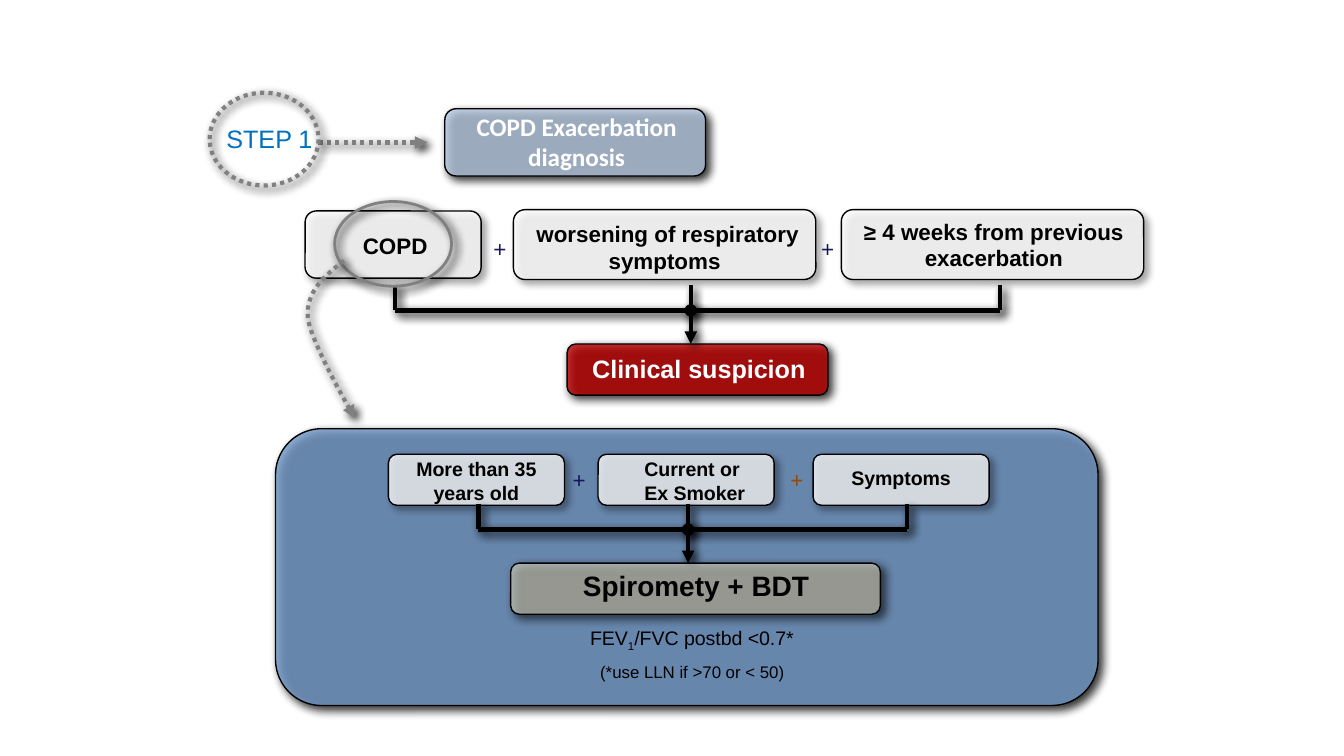
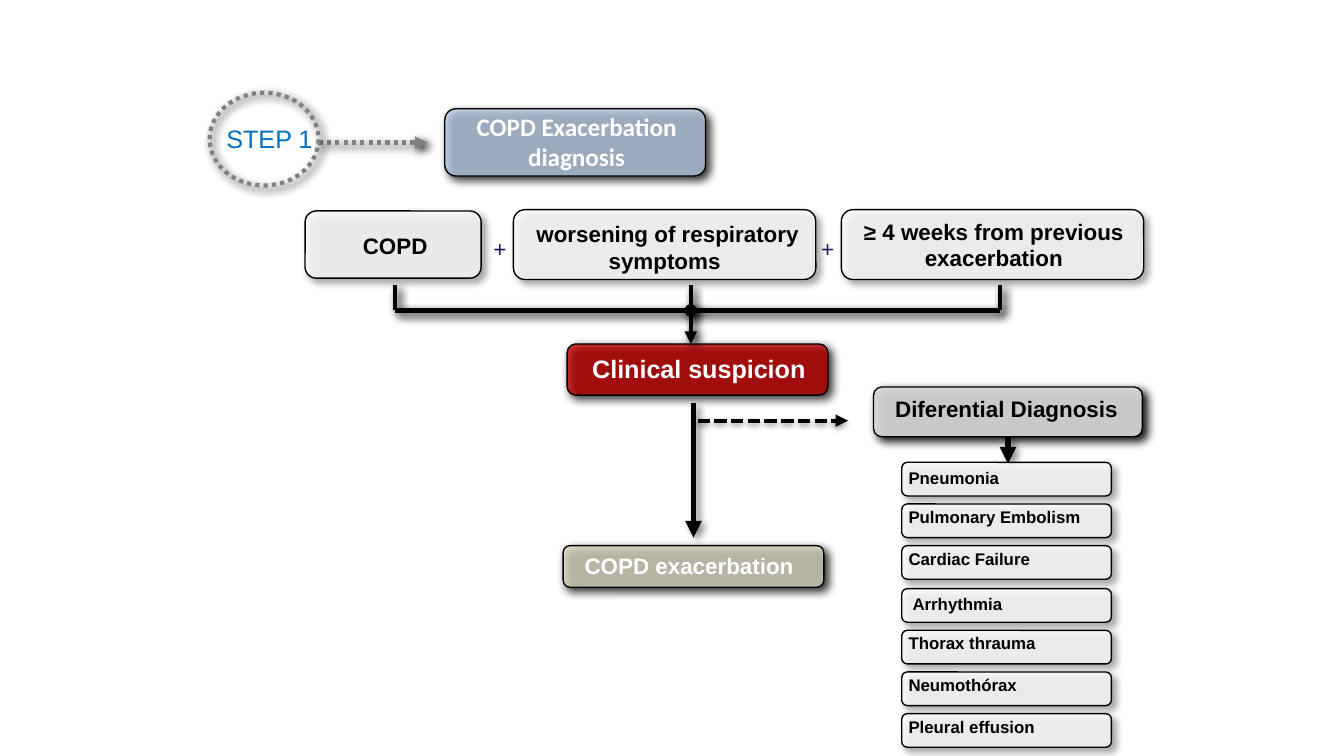
import dataclasses
import pptx
import pptx.dml.color
import pptx.enum.dml
import pptx.enum.shapes
import pptx.enum.text
import pptx.oxml
import pptx.oxml.ns
import pptx.util

PX = 9144  # one px is a hundredth of an inch
SHAPE = pptx.enum.shapes.MSO_SHAPE
ALIGN = pptx.enum.text.PP_ALIGN
ANCHOR = pptx.enum.text.MSO_ANCHOR
DASH = pptx.enum.dml.MSO_LINE


@dataclasses.dataclass(frozen=True)
class Theme:
    font: str = "Arial"
    title_font: str = "Calibri"
    black: str = "000000"
    white: str = "FFFFFF"
    grey: str = "808080"
    step: str = "0070C0"
    plus: str = "16165D"
    plus_warm: str = "984807"
    # fills: colour and opacity in percent
    header: tuple = ("B9CDE5", 77)
    alert: tuple = ("C00000", 77)
    plain: tuple = ("FFFFFF", 77)
    panel: tuple = ("759CCC", 79)
    test: tuple = ("DDD9C3", 60)
    outcome: tuple = ("DDD9C3", 77)
    differential: tuple = ("D9D9D9", 92)
    # shadows: opacity in percent, blur and distance in points, angle
    strong: tuple = (100, 5, 2.8, 45)
    soft: tuple = (43, 4, 3, 45)
    faint: tuple = (38, 3.1, 1.6, 90)
    # type sizes
    result: float = 15
    lead: float = 13.5
    body: float = 12
    small: float = 10.5
    tiny: float = 9


T = Theme()


# Shared helpers

def px(*values):
    return [pptx.util.Emu(round(v * PX)) for v in values]


def at(box, dx, dy, w, h):
    return box[0] + dx, box[1] + dy, w, h


def rgb(color):
    return pptx.dml.color.RGBColor.from_string(color)


def apply(obj, values):
    for name, value in values.items():
        setattr(obj, name, value)


def sub(parent, tag, **attrs):
    el = pptx.oxml.parse_xml(f"<a:{tag} {pptx.oxml.ns.nsdecls('a')}/>")
    for name, value in attrs.items():
        el.set(name, str(value))
    parent.append(el)
    return el


def outline(sp, color, width, dash=None, head=None, tail=None):
    sp.line.color.rgb = rgb(color)
    sp.line.width = pptx.util.Pt(width)
    if dash:
        sp.line.dash_style = dash
    ln = sp.line._get_or_add_ln()
    for tag, kind in (("headEnd", head), ("tailEnd", tail)):
        if kind:
            sub(ln, tag, type=kind)


def cast(sp, shadow):
    opacity, blur, dist, angle = shadow
    effects = sub(sp._element.spPr, "effectLst")
    outer = sub(effects, "outerShdw", blurRad=round(blur * 12700), dist=round(dist * 12700),
                dir=angle * 60000, algn="tl", rotWithShape=0)
    sub(sub(outer, "srgbClr", val=T.black), "alpha", val=opacity * 1000)


def shape(s, kind, box, fill=None, color=T.black, width=0.75, dash=None, shadow=T.strong):
    sp = s.shapes.add_shape(kind, *px(*box))
    if fill:
        sp.fill.solid()
        sp.fill.fore_color.rgb = rgb(fill[0])
        clr = sp._element.spPr.find(".//" + pptx.oxml.ns.qn("a:srgbClr"))
        sub(clr, "alpha", val=fill[1] * 1000)
    else:
        sp.fill.background()
    outline(sp, color, width, dash)
    cast(sp, shadow)
    return sp


def line(s, start, end, color=T.black, width=2.25, shadow=T.strong, **ends):
    straight = pptx.enum.shapes.MSO_CONNECTOR.STRAIGHT
    sp = s.shapes.add_connector(straight, *px(*start, *end))
    outline(sp, color, width, **ends)
    cast(sp, shadow)


def write(sp, box, lines, size, color=T.black, bold=True, align=ALIGN.CENTER,
          font=T.font, anchor=ANCHOR.BOTTOM, inset=(7, 3), after=0):
    """Fill a text holder; parts between bars are subscripts."""
    apply(sp, dict(zip(("left", "top", "width", "height"), px(*box))))
    tf = sp.text_frame
    dx, dy = px(*inset)
    apply(tf, dict(word_wrap=True, auto_size=pptx.enum.text.MSO_AUTO_SIZE.NONE,
                   vertical_anchor=anchor, margin_left=dx, margin_right=dx,
                   margin_top=dy, margin_bottom=dy))
    for i, text in enumerate(lines):
        p = tf.add_paragraph() if i else tf.paragraphs[0]
        apply(p, dict(alignment=align, space_after=pptx.util.Pt(after)))
        for j, part in enumerate(text.split("|")):
            r = p.add_run()
            r.text = part
            apply(r.font, dict(name=font, size=pptx.util.Pt(size), bold=bold))
            r.font.color.rgb = rgb(color)
            if j % 2:
                r._r.get_or_add_rPr().set("baseline", "-25000")
    return sp


def label(s, box, lines, size, **style):
    return write(s.shapes.add_textbox(*px(*box)), box, lines, size, **style)


def card(s, box, fill, text_box, lines, size, shadow=T.strong, **style):
    shape(s, SHAPE.ROUNDED_RECTANGLE, box, fill, shadow=shadow)
    label(s, text_box, lines, size, **style)


def plus(s, x, y, color=T.plus):
    label(s, (x, y, 25, 27), ["+"], T.body, color=color, bold=False, align=ALIGN.LEFT)


def bracket(s, xs, top):
    """Join three columns into one downward arrow."""
    left, middle, right = xs
    bar = top + 19
    line(s, (left, bar), (right, bar))
    for x in (right, middle, left):
        line(s, (x, top), (x, bar))
    line(s, (middle, bar), (middle, bar + 25), head="oval", tail="triangle")


# Regions

def step_header(s, box):
    x, y = box[:2]
    label(s, at(box, -27, 18, 143, 33), ["STEP 1"], T.lead, color=T.step, bold=False,
          anchor=ANCHOR.TOP, inset=(10, 5))
    shape(s, SHAPE.ROUNDED_RECTANGLE, at(box, 175, 12, 194, 50), T.header)
    title = s.shapes.title
    write(title, at(box, 176, 10, 194, 52), ["COPD Exacerbation diagnosis"], T.lead,
          color=T.white, font=T.title_font)
    s.shapes._spTree.append(title._element)  # bring in front of its panel
    line(s, (x + 81, y + 37), (x + 162, y + 37), color=T.grey, dash=DASH.ROUND_DOT,
         tail="triangle")
    shape(s, SHAPE.OVAL, at(box, 0, 0, 81, 69), color=T.grey, width=2.25,
          dash=DASH.ROUND_DOT)


def suspicion(s, box):
    x, y = box[:2]
    card(s, at(box, 195, 100, 194, 38), T.alert, at(box, 205, 103, 176, 29),
         ["Clinical suspicion"], T.lead, color=T.white)
    criteria = [
        ((0, 1, 131, 50), (36, 13, 81, 27), "COPD", ALIGN.LEFT),
        ((155, 0, 225, 52), (152, 4, 231, 47), " worsening of respiratory symptoms",
         ALIGN.CENTER),
        ((399, 0, 225, 52), (407, 2, 211, 47), "≥ 4 weeks from previous exacerbation",
         ALIGN.CENTER),
    ]
    for frame, text_frame, text, align in criteria:
        card(s, at(box, *frame), T.plain, at(box, *text_frame), [text], T.body,
             shadow=T.soft, align=align)
    for dx in (133, 377):
        plus(s, x + dx, y + 15)
    bracket(s, (x + 67, x + 287, x + 517), y + 56)


def copd_callout(s, box):
    x, y = box[:2]
    shape(s, SHAPE.OVAL, box, color=T.grey, width=1.5)
    # Curve from the ring to the panel: two joined cubics
    curves = [((7, 44), (-7, 55), (-21, 66), (-20, 86)),
              ((-20, 86), (-18, 105), (15, 161), (15, 161))]
    points = []
    for a, b, c, d in curves:
        for i in range(21):
            t = i / 20
            weights = ((1 - t) ** 3, 3 * t * (1 - t) ** 2, 3 * t * t * (1 - t), t ** 3)
            dx, dy = (sum(w * v for w, v in zip(weights, axis)) for axis in zip(a, b, c, d))
            points.append(tuple(px(x + dx, y + dy)))
    builder = s.shapes.build_freeform(*points[0])
    builder.add_line_segments(points[1:], close=False)
    sp = builder.convert_to_shape()
    sp.fill.background()
    outline(sp, T.grey, 2.25, DASH.ROUND_DOT, tail="triangle")
    cast(sp, T.strong)


def copd_panel(s, box):
    x, y = box[:2]
    shape(s, SHAPE.ROUNDED_RECTANGLE, box, T.panel)
    criteria = [
        (84, (82, 17, 135, 42), ["More than 35 years old"]),
        (240, (227, 17, 170, 42), ["Current or ", "Ex Smoker"]),
        (400, (403, 24, 125, 24), ["Symptoms"]),
    ]
    for dx, text_frame, lines in criteria:
        card(s, at(box, dx, 19, 131, 38), T.plain, at(box, *text_frame), lines, T.small,
             shadow=T.soft)
    plus(s, x + 214, y + 24)
    plus(s, x + 376, y + 24, T.plus_warm)
    bracket(s, (x + 151, x + 307, x + 470), y + 56)
    note = label(s, at(box, 188, 142, 244, 50),
                 ["FEV|1|/FVC postbd <0.7*", "(*use LLN if >70 or < 50)"], T.small,
                 bold=False, anchor=ANCHOR.TOP, inset=(10, 5), after=5)
    note.text_frame.paragraphs[1].runs[0].font.size = pptx.util.Pt(T.tiny)
    card(s, at(box, 175, 100, 275, 38), T.test, at(box, 188, 100, 250, 32),
         ["Spiromety + BDT"], T.result)


def outcome(s, box):
    x, y = box[:2]
    line(s, (x + 97, y), (x + 97, y + 100), width=3, shadow=T.soft, tail="triangle")
    card(s, at(box, 0, 106, 194, 31), T.outcome, at(box, 9, 107, 176, 27),
         ["COPD exacerbation"], T.body, color=T.white, align=ALIGN.LEFT)


def differential(s, box):
    x, y = box[:2]
    line(s, (x - 131, y + 25), (x - 19, y + 25), dash=DASH.SQUARE_DOT, shadow=T.faint,
         tail="triangle")
    card(s, at(box, 0, 0, 200, 37), T.differential, at(box, 9, 2, 182, 27),
         ["Diferential Diagnosis"], T.body, align=ALIGN.LEFT)
    line(s, (x + 100, y + 37), (x + 100, y + 57), width=3, shadow=T.soft, tail="triangle")
    diseases = [("Pneumonia", -2, 0), ("Pulmonary Embolism", -2, -2),
                ("Cardiac Failure", -2, -2), ("Arrhythmia", 1, 0),
                ("Thorax thrauma", -2, -2), ("Neumothórax", -2, -2),
                ("Pleural effusion", -2, -2)]
    for i, (name, dx, dy) in enumerate(diseases):
        row = at(box, 21, 56 + round(i * 31.2), 156, 25)
        card(s, row, T.plain, at(row, dx, dy, 160, 22), [name], T.tiny, shadow=T.soft,
             align=ALIGN.LEFT)


# Slides

def step_slide(prs, parts):
    s = prs.slides.add_slide(prs.slide_layouts[5])
    step_header(s, (156, 69, 369, 69))
    suspicion(s, (227, 156, 624, 138))
    for draw, box in parts:
        draw(s, box)


def main():
    prs = pptx.Presentation()
    prs.slide_width, = px(1000)
    prs.slide_height = prs.slide_width * 9 // 16
    step_slide(prs, [(copd_callout, (249, 150, 87, 63)),
                     (copd_panel, (205, 319, 612, 206))])
    step_slide(prs, [(differential, (650, 288, 200, 268)),
                     (outcome, (419, 300, 194, 137))])
    prs.save("out.pptx")


if __name__ == "__main__":
    main()
